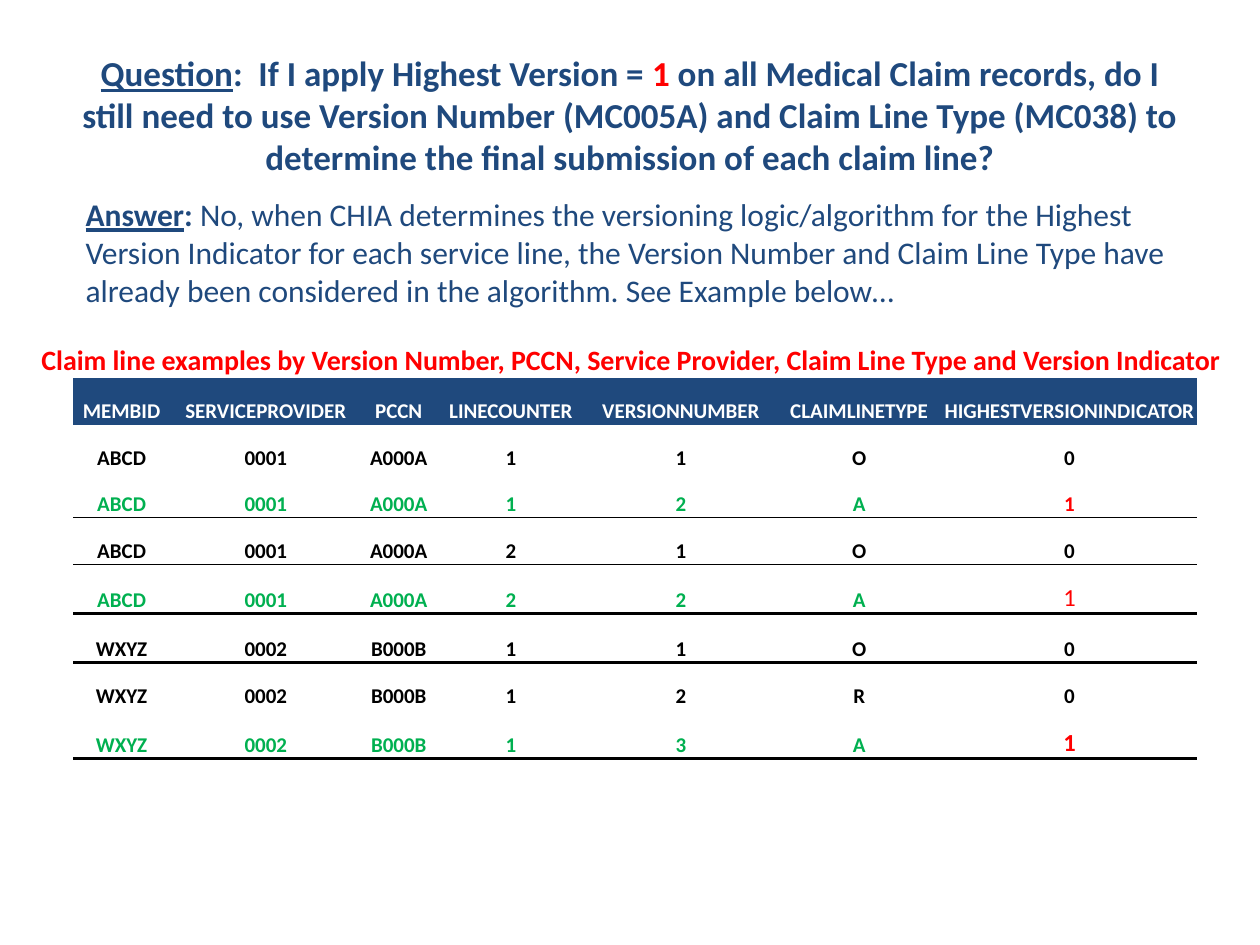
"""Build the slide on the highest version indicator for claim lines."""
import pptx
import pptx.dml.color
import pptx.enum.text
import pptx.oxml.ns
import pptx.util
from lxml import etree

Pt = pptx.util.Pt
Anchor = pptx.enum.text.MSO_ANCHOR
Align = pptx.enum.text.PP_ALIGN
qn = pptx.oxml.ns.qn

COLORS = {
    "navy": "1F497D",
    "red": "FF0000",
    "green": "00B050",
    "black": "000000",
    "white": "FFFFFF",
}
NO_GRID_STYLE = "{2D5ABB26-0587-4C30-8999-92F81FD0307C}"
COLUMN_WIDTHS = [55.4, 109.4, 42.5, 85.7, 108.7, 95, 145.4]
ROW_HEIGHTS = [26.6, 26.6, 26.6, 26.6, 28.1, 28.1, 26.6, 28.1]
HEADINGS = ["MEMBID", "SERVICEPROVIDER", "PCCN", "LINECOUNTER",
            "VERSIONNUMBER", "CLAIMLINETYPE", "HIGHESTVERSIONINDICATOR"]
CLAIM_LINES = [
    ["ABCD", "0001", "A000A", "1", "1", "O", "0"],
    ["ABCD", "0001", "A000A", "1", "2", "A", "1"],
    ["ABCD", "0001", "A000A", "2", "1", "O", "0"],
    ["ABCD", "0001", "A000A", "2", "2", "A", "1"],
    ["WXYZ", "0002", "B000B", "1", "1", "O", "0"],
    ["WXYZ", "0002", "B000B", "1", "2", "R", "0"],
    ["WXYZ", "0002", "B000B", "1", "3", "A", "1"],
]
RULES_BELOW = {2: 0.5, 4: 2, 7: 2}
INDICATOR_FONTS = {4: (14, False), 7: (14, True)}


def rgb(name):
    """Return the named colour."""
    return pptx.dml.color.RGBColor.from_string(COLORS[name])


def add_span(para, text, size, color, bold=True, underline=False):
    """Add one formatted run to a paragraph."""
    span = para.add_run()
    span.text = text
    span.font.name = "Calibri"
    span.font.size = Pt(size)
    span.font.bold = bold
    span.font.underline = underline
    span.font.color.rgb = rgb(color)


def place(shape, left, top, width, height):
    """Set the position and size of a shape."""
    shape.left, shape.top = Pt(left), Pt(top)
    shape.width, shape.height = Pt(width), Pt(height)


def fill_title(title):
    """Place the title and write the question."""
    place(title, 36, 21.6, 648, 134.6)
    frame = title.text_frame
    frame.word_wrap = True
    frame.auto_size = pptx.enum.text.MSO_AUTO_SIZE.NONE
    frame.vertical_anchor = Anchor.TOP
    frame.margin_top = Pt(8)
    para = frame.paragraphs[0]
    para.alignment = Align.CENTER
    add_span(para, "Question", 20, "navy", underline=True)
    add_span(para, ":  If I apply Highest Version = ", 20, "navy")
    add_span(para, "1", 20, "red")
    add_span(para, " on all Medical Claim records, do I still need to use "
             "Version Number (MC005A) and Claim Line Type (MC038) to "
             "determine the final submission of each claim line?", 20, "navy")


def add_box(page, left, top, width, height, wrap=True):
    """Add a text box and return its first paragraph."""
    box = page.shapes.add_textbox(Pt(left), Pt(top), Pt(width), Pt(height))
    box.text_frame.word_wrap = wrap
    return box.text_frame.paragraphs[0]


def add_rule(cell, edge, width):
    """Draw a black border on one edge of a cell."""
    line = etree.SubElement(cell._tc.get_or_add_tcPr(), qn("a:" + edge),
                            w=str(Pt(width)))
    fill = etree.SubElement(line, qn("a:solidFill"))
    etree.SubElement(fill, qn("a:srgbClr"), val=COLORS["black"])


def fill_cell(cell, text, row, column):
    """Write and format one table cell."""
    is_final = row > 0 and CLAIM_LINES[row - 1][-1] == "1"
    color = "white" if row == 0 else "green" if is_final else "black"
    size, bold = 12, True
    if is_final and column == len(HEADINGS) - 1:
        color = "red"
        size, bold = INDICATOR_FONTS.get(row, (size, bold))
    cell.vertical_anchor = Anchor.BOTTOM
    cell.margin_left = cell.margin_right = cell.margin_top = Pt(0.7)
    cell.margin_bottom = Pt(0)
    for edge, rule_row in (("lnT", row - 1), ("lnB", row)):
        if rule_row in RULES_BELOW:
            add_rule(cell, edge, RULES_BELOW[rule_row])
    if row == 0:
        cell.fill.solid()
        cell.fill.fore_color.rgb = rgb("navy")
    else:
        cell.fill.background()
    para = cell.text_frame.paragraphs[0]
    para.alignment = Align.CENTER
    add_span(para, text, size, color, bold)


def add_claim_table(page):
    """Add the table of claim line examples."""
    frame = page.shapes.add_table(
        len(ROW_HEIGHTS), len(COLUMN_WIDTHS), Pt(41.8), Pt(216),
        Pt(sum(COLUMN_WIDTHS)), Pt(sum(ROW_HEIGHTS)))
    table = frame.table
    table.horz_banding = False
    for style in table._tbl.iter(qn("a:tableStyleId")):
        style.text = NO_GRID_STYLE
    for column, width in zip(table.columns, COLUMN_WIDTHS):
        column.width = Pt(width)
    for row, height in zip(table.rows, ROW_HEIGHTS):
        row.height = Pt(height)
    for row, texts in enumerate([HEADINGS] + CLAIM_LINES):
        for column, text in enumerate(texts):
            fill_cell(table.cell(row, column), text, row, column)


def main():
    """Build and save the deck."""
    deck = pptx.Presentation()
    deck.slide_width, deck.slide_height = Pt(720), Pt(540)
    page = deck.slides.add_slide(deck.slide_layouts[5])
    fill_title(page.shapes.title)
    add_claim_table(page)
    answer = add_box(page, 41.8, 108, 653.8, 72.7)
    add_span(answer, "Answer", 18, "navy", underline=True)
    add_span(answer, ": ", 18, "navy")
    add_span(answer, "No, when CHIA determines the versioning logic/algorithm "
             "for the Highest Version Indicator for each service line, the "
             "Version Number and Claim Line Type have already been considered "
             "in the algorithm. See Example below…", 18, "navy", bold=False)
    caption = add_box(page, 16.6, 192.2, 703.4, 26.6, wrap=False)
    add_span(caption, "Claim line examples by Version Number, PCCN, Service "
             "Provider, Claim Line Type and Version Indicator", 16, "red")
    deck.save("out.pptx")


if __name__ == "__main__":
    main()
